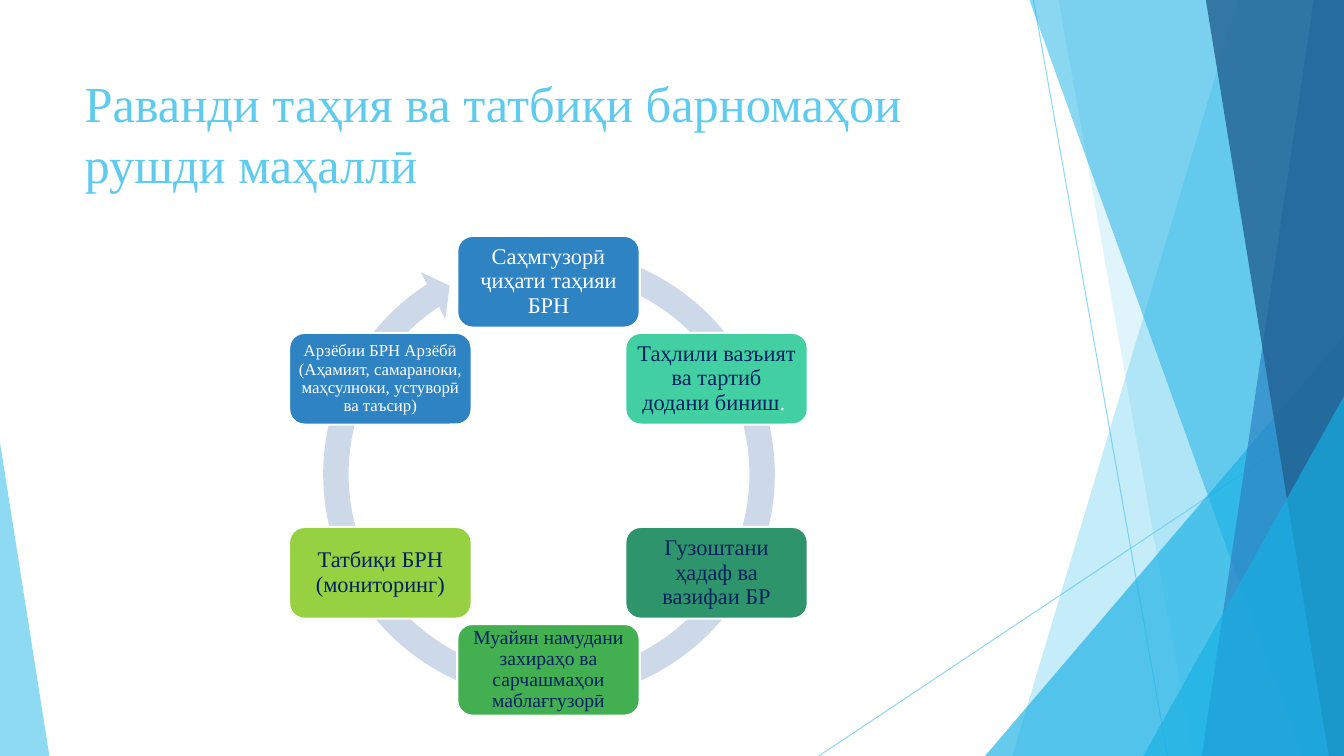
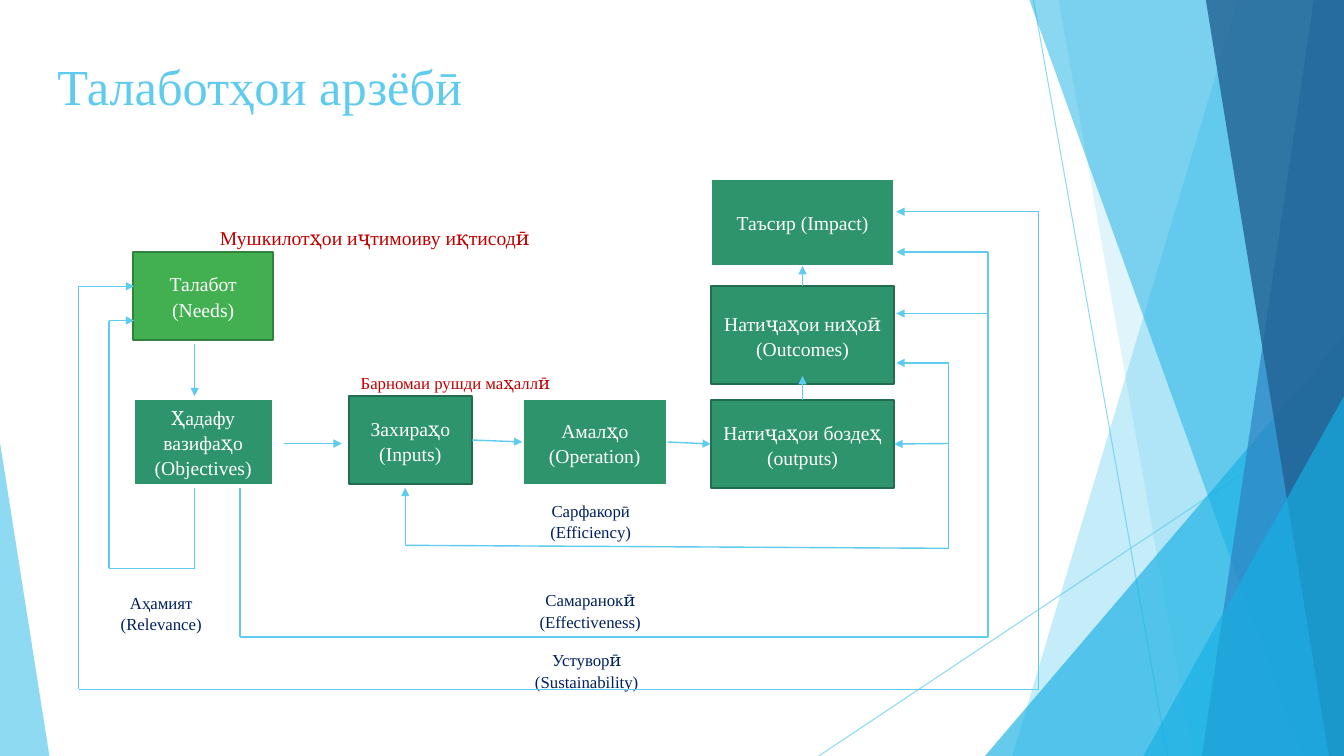
"""Build two slides on local development programmes and their evaluation."""
import itertools
import math

import pptx
import pptx.dml.color
import pptx.enum.shapes
import pptx.enum.text
import pptx.oxml
import pptx.oxml.ns
import pptx.util
from lxml import etree

Inches = pptx.util.Inches
Pt = pptx.util.Pt
RGB = pptx.dml.color.RGBColor
KIND = pptx.enum.shapes.MSO_SHAPE
LINK = pptx.enum.shapes.MSO_CONNECTOR.STRAIGHT
ALIGN = pptx.enum.text.PP_ALIGN
ANCHOR = pptx.enum.text.MSO_ANCHOR
qn = pptx.oxml.ns.qn

WIDE, HIGH = 13.33, 7.5
WHITE = RGB(0xFF, 0xFF, 0xFF)
SKY = RGB(0x5F, 0xCB, 0xEF)
CYAN = RGB(0x17, 0xB0, 0xE4)
BLUE = RGB(0x2E, 0x83, 0xC3)
DEEP = RGB(0x22, 0x62, 0x92)
NAVY = RGB(0x00, 0x20, 0x60)
RED = RGB(0xC0, 0x00, 0x00)
PALE = RGB(0xCD, 0xD9, 0xE9)
MINT = RGB(0x42, 0xD0, 0xA2)
TEAL = RGB(0x2E, 0x94, 0x6B)
PINE = RGB(0x22, 0x6D, 0x4F)
GREEN = RGB(0x42, 0xB0, 0x51)
MOSS = RGB(0x31, 0x82, 0x3C)
LIME = RGB(0x96, 0xD1, 0x41)
SERIF, EXTRA = "Times New Roman", "Cambria"
TAJIK = "ҲҳҷқӣӢ"

RAYS = [((10.25, 0), (11.58, HIGH)), ((WIDE, 4.03), (8.12, HIGH))]
BANDS = [
    ("slab", 12.28, 10.04, SKY, 36),
    ("slab", 10.5, 11.83, SKY, 20),
    ("wedge", (9.77, 3.33, 3.56, 4.17), 1, CYAN, 66),
    ("slab", 10.21, 12.91, CYAN, 50),
    ("slab", 13.03, 11.92, BLUE, 70),
    ("slab", 11.96, 13.18, DEEP, 80),
    ("wedge", (11.34, 3.93, 1.99, 3.57), 1, CYAN, 66),
    ("wedge", (0, 4.39, 0.49, 3.11), 0, SKY, 70),
]

CYCLE = "Раванди таҳия ва татбиқи барномаҳои рушди маҳаллӣ"
STEPS = [
    ("Саҳмгузорӣ ҷиҳати таҳияи БРН", BLUE, WHITE, 16, 0.07),
    ([("Таҳлили вазъият ва тартиб додани биниш", NAVY), (". ", WHITE)],
     MINT, NAVY, 16, 0.07),
    ("Гузоштани ҳадаф ва вазифаи БР", TEAL, NAVY, 16, 0.07),
    ("Муайян намудани захираҳо ва сарчашмаҳои маблағгузорӣ",
     GREEN, NAVY, 14, 0.06),
    ("Татбиқи БРН (мониторинг)", LIME, NAVY, 16, 0.07),
    ("Арзёбии БРН Арзёбӣ (Аҳамият, самараноки, маҳсулноки, устуворӣ ва таъсир)",
     BLUE, WHITE, 12, 0.05),
]
HUB, REACH, NODE = (5.44, 4.72), 1.925, (1.81, 0.91)
RING = (3.07, 2.33, 4.75, 4.75)
BEND = (0.053, 3.126, 142.216, 171.308, 0.055)

NEEDS = "Талаботҳои арзёбӣ"
BOXES = {
    "need": ("Талабот (Needs)", (1.32, 2.5, 1.39, 0.87), GREEN, MOSS, 1.5),
    "aim": ("Ҳадафу вазифаҳо (Objectives)", (1.32, 3.95, 1.39, 0.87),
            TEAL, WHITE, 2),
    "input": ("Захираҳо (Inputs)", (3.46, 3.93, 1.22, 0.87), TEAL, PINE, 1.5),
    "work": ("Амалҳо (Operation)", (5.18, 3.95, 1.44, 0.87), TEAL, WHITE, 2),
    "output": ("Натиҷаҳои боздеҳ (outputs)", (7.05, 3.97, 1.82, 0.87),
               TEAL, PINE, 1.5),
    "outcome": ("Натиҷаҳои ниҳоӣ (Outcomes)", (7.05, 2.84, 1.82, 0.97),
                TEAL, PINE, 1.5),
    "impact": ("Таъсир (Impact)", (7.05, 1.77, 1.82, 0.87), TEAL, WHITE, 2),
}
LABELS = [
    ("Самаранокӣ (Effectiveness)", (5.09, 5.71, 1.53, 0.69), 12, NAVY, True),
    ("Устуворӣ (Sustainability)", (5.1, 6.3, 1.44, 0.69), 12, NAVY, True),
    ("Сарфакорӣ (Efficiency)", (5.18, 4.82, 1.36, 0.69), 12, NAVY, False),
    ("Аҳамият (Relevance)", (0.95, 5.73, 1.3, 0.69), 12, NAVY, False),
    ("Мушкилотҳои иҷтимоиву иқтисодӣ", (1.69, 1.97, 4.05, 0.76), 14, RED, True),
    ("Барномаи рушди маҳаллӣ", (2.49, 3.41, 4.05, 0.76), 12, RED, True),
]
TIP = 8.89
ROUTES = [
    ([(1.33, 2.84), (0.78, 2.84), (0.78, 6.84), (10.3, 6.84), (10.3, 2.1),
      (TIP, 2.1)], True),
    ([(1.93, 4.84), (1.93, 5.64), (1.08, 5.64), (1.08, 3.18), (1.33, 3.18)],
     False),
    ([(2.38, 4.84), (2.38, 6.32), (9.8, 6.32), (9.8, 2.5), (TIP, 2.5)], False),
    ([(9.8, 3.11), (TIP, 3.11)], False),
    ([(4.02, 4.84), (4.02, 5.41), (9.41, 5.44), (9.41, 3.6), (TIP, 3.6)], True),
    ([(2.82, 4.4), (3.39, 4.4)], False),
    ([(1.93, 3.41), (1.93, 3.93)], False),
]
JOINS = [
    ((4.7, 4.4), (5.2, 4.4), ("input", 3), ("work", 1)),
    ((6.63, 4.4), (7.07, 4.4), ("work", 3), ("output", 1)),
    ((7.96, 3.97), (7.96, 3.73), ("output", 0), None),
    ((7.96, 2.84), (7.96, 2.64), ("outcome", 0), ("impact", 2)),
    ((9.4, 4.4), (TIP, 4.4), None, ("output", 3)),
]


def write(shape, text, size=14, color=WHITE, align=ALIGN.CENTER,
          anchor=ANCHOR.MIDDLE, pitch=1.07, inset=None, mixed=False):
    frame = shape.text_frame
    frame.word_wrap = True
    frame.vertical_anchor = anchor
    if inset is not None:
        frame.margin_left = frame.margin_right = Inches(inset)
        frame.margin_top = frame.margin_bottom = Inches(inset)
    para = frame.paragraphs[0]
    para.alignment = align
    para.line_spacing = pitch
    parts = [(text, color)] if isinstance(text, str) else text
    for words, tint in parts:
        for extra, chars in itertools.groupby(
                words, lambda char: mixed and char in TAJIK):
            run = para.add_run()
            run.text = "".join(chars)
            run.font.size = Pt(size)
            run.font.name = EXTRA if extra else SERIF
            run.font.color.rgb = tint


def fade(shape, share):
    for tint in shape.element.spPr.iter(qn("a:srgbClr")):
        etree.SubElement(tint, qn("a:alpha"), val=str(share * 1000))


def paint(shape, fill, edge=None, width=1):
    shape.shadow.inherit = False
    shape.fill.solid()
    shape.fill.fore_color.rgb = fill
    if edge is None:
        shape.line.fill.background()
    else:
        shape.line.color.rgb = edge
        shape.line.width = Pt(width)


def place(slide, kind, box, fill, edge=None, width=1):
    shape = slide.shapes.add_shape(kind, *map(Inches, box))
    paint(shape, fill, edge, width)
    return shape


def label(slide, text, box, **style):
    write(slide.shapes.add_textbox(*map(Inches, box)), text, **style)


def draw(slide, start, end, width=1, heads=()):
    line = slide.shapes.add_connector(LINK, *map(Inches, (*start, *end)))
    line.line.color.rgb = SKY
    line.line.width = Pt(width)
    stroke = line.element.spPr.find(qn("a:ln"))
    for head in heads:
        etree.SubElement(stroke, qn("a:" + head), type="triangle")
    etree.SubElement(line.element.spPr, qn("a:effectLst"))
    return line


def trace(slide, points, both):
    legs = list(itertools.pairwise(points))
    for spot, (start, end) in enumerate(legs):
        heads = ["headEnd"] if both and spot == 0 else []
        if spot == len(legs) - 1:
            heads.append("tailEnd")
        draw(slide, start, end, heads=heads)


def slab(slide, top, base):
    form = slide.shapes.build_freeform(Inches(top), 0)
    form.add_line_segments(
        [(Inches(x), Inches(y))
         for x, y in ((WIDE, 0), (WIDE, HIGH), (base, HIGH))], close=True)
    return form.convert_to_shape()


def start(deck, title, left, top):
    slide = deck.slides.add_slide(deck.slide_layouts[6])
    for ray in RAYS:
        fade(draw(slide, *ray, width=0.75), 70)
    for kind, first, second, fill, share in BANDS:
        if kind == "slab":
            band = slab(slide, first, second)
            paint(band, fill)
        else:
            band = place(slide, KIND.ISOSCELES_TRIANGLE, first, fill)
            band.adjustments[0] = second
        fade(band, share)
    label(slide, title, (left, top, 9.4, 1.44), size=36, color=SKY,
          align=ALIGN.LEFT, anchor=ANCHOR.TOP, pitch=1.0)
    return slide


def cycle(deck):
    slide = start(deck, CYCLE, 0.74, 0.67)
    ring = place(slide, KIND.CIRCULAR_ARROW, RING, PALE)
    for spot, value in enumerate(BEND):
        ring.adjustments[spot] = value
    wide, high = NODE
    for spot, (text, fill, color, size, inset) in enumerate(STEPS):
        turn = math.tau * spot / len(STEPS)
        left = HUB[0] + REACH * math.sin(turn) - wide / 2
        top = HUB[1] - REACH * math.cos(turn) - high / 2
        node = place(slide, KIND.ROUNDED_RECTANGLE, (left, top, wide, high),
                     fill, WHITE, 1.5)
        write(node, text, size=size, color=color, pitch=0.9, inset=inset)


def chain(deck):
    slide = start(deck, NEEDS, 0.47, 0.5)
    cells = {}
    for name, (text, box, fill, edge, width) in BOXES.items():
        cells[name] = place(slide, KIND.RECTANGLE, box, fill, edge, width)
        write(cells[name], text, mixed=True)
    for text, box, size, color, mixed in LABELS:
        label(slide, text, box, size=size, color=color, mixed=mixed)
    for points, both in ROUTES:
        trace(slide, points, both)
    for first, last, tail, head in JOINS:
        line = draw(slide, first, last, heads=["tailEnd"])
        if tail:
            line.begin_connect(cells[tail[0]], tail[1])
        if head:
            line.end_connect(cells[head[0]], head[1])


def main():
    deck = pptx.Presentation()
    deck.slide_width, deck.slide_height = Inches(WIDE), Inches(HIGH)
    cycle(deck)
    chain(deck)
    deck.save("out.pptx")


if __name__ == "__main__":
    main()
